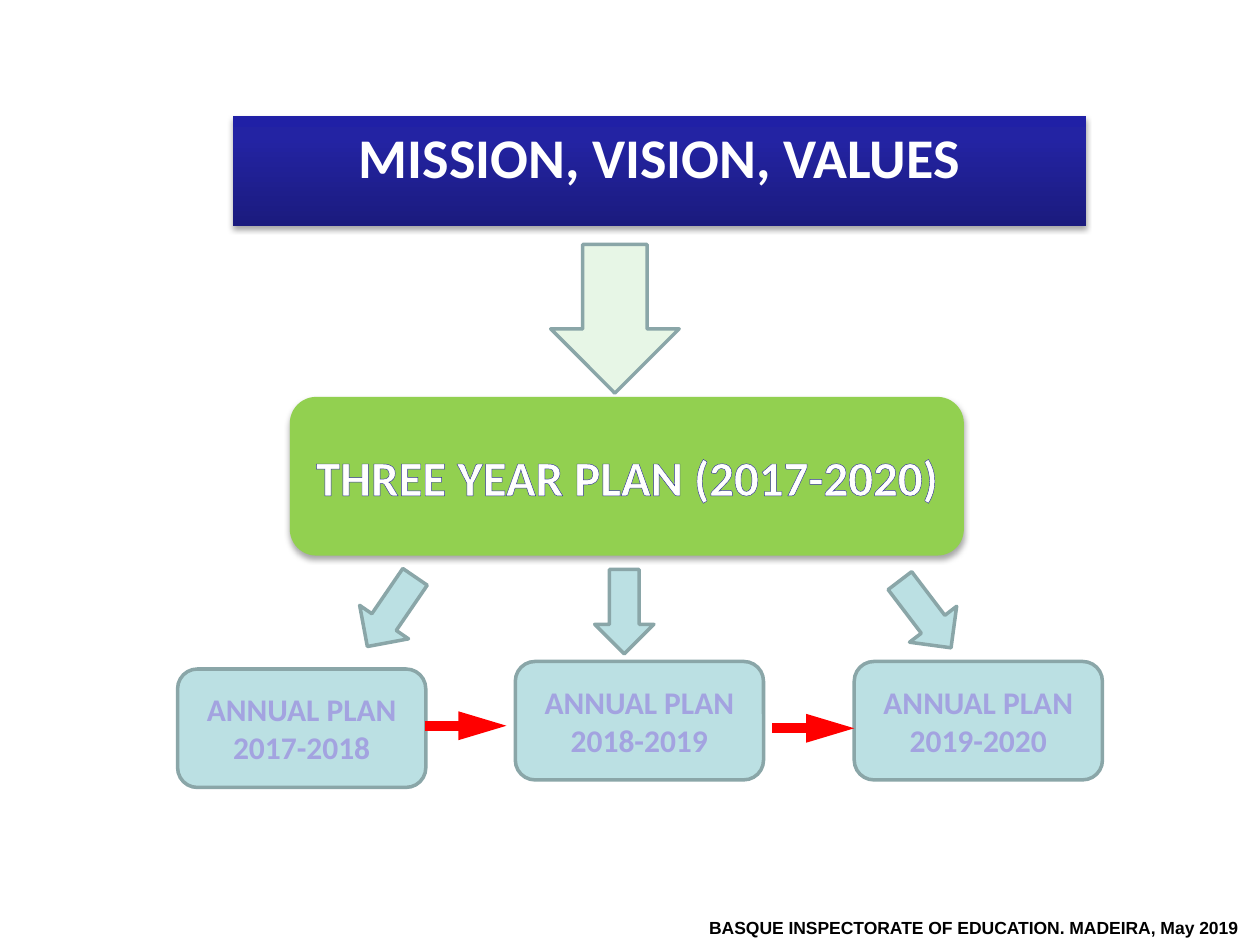
from copy import deepcopy

from lxml import etree
from pptx import Presentation
from pptx.dml.color import RGBColor
from pptx.enum.shapes import MSO_CONNECTOR, MSO_SHAPE
from pptx.enum.text import MSO_ANCHOR, MSO_AUTO_SIZE, PP_ALIGN
from pptx.oxml.ns import qn
from pptx.util import Pt

PX = 9144
STRAIGHT = MSO_CONNECTOR.STRAIGHT
DOWN_ARROW, ROUNDED = MSO_SHAPE.DOWN_ARROW, MSO_SHAPE.ROUNDED_RECTANGLE
TOP, MIDDLE = MSO_ANCHOR.TOP, MSO_ANCHOR.MIDDLE
LEFT, CENTER = PP_ALIGN.LEFT, PP_ALIGN.CENTER
NO_FIT = MSO_AUTO_SIZE.NONE

WHITE = RGBColor(0xFF, 0xFF, 0xFF)
BLACK = RGBColor(0x00, 0x00, 0x00)
RED = RGBColor(0xFF, 0x00, 0x00)
GREEN = RGBColor(0x92, 0xD0, 0x50)
MINT = RGBColor(0xE7, 0xF6, 0xE6)
AQUA = RGBColor(0xBB, 0xE0, 0xE3)
GREY = RGBColor(0x8A, 0xA6, 0xA8)
LILAC = RGBColor(0xA3, 0xA3, 0xE0)
INDIGO = RGBColor(0x33, 0x33, 0x99)
NAVY_STOPS = (
    (0, RGBColor(0x1B, 0x1B, 0x7E)),
    (0.8, RGBColor(0x23, 0x23, 0xA3)),
    (1, RGBColor(0x20, 0x20, 0xA6)),
)


class PlanSlide:
    """Holds the style and the current slide, and draws each kind of element."""

    def __init__(self, page):
        self.page = page
        self.heading_font = "Calibri"
        self.footer_font = "Arial"

    def set_text(self, box, text, size, color, font, align=CENTER, anchor=MIDDLE, outline=None):
        frame = box.text_frame
        frame.text = text
        frame.vertical_anchor = anchor
        para = frame.paragraphs[0]
        para.alignment = align
        span = para.runs[0]
        span.font.name = font
        span.font.size = Pt(size)
        span.font.bold = True
        span.font.color.rgb = color
        if outline:
            line = etree.Element(qn("a:ln"), w=str(Pt(1.75)))
            fill = etree.SubElement(line, qn("a:solidFill"))
            etree.SubElement(fill, qn("a:srgbClr"), val=str(outline))
            span.font._element.insert(0, line)

    def add_shadow(self, shape):
        shape.shadow.inherit = False
        effects = shape._element.spPr.find(qn("a:effectLst"))
        shadow = etree.SubElement(
            effects, qn("a:outerShdw"), blurRad="40000", dist="23000", dir="5400000", rotWithShape="0"
        )
        color = etree.SubElement(shadow, qn("a:srgbClr"), val=str(BLACK))
        etree.SubElement(color, qn("a:alpha"), val="35000")

    def title(self, text, left, top, width, height):
        box = self.page.shapes.title
        box.left, box.top, box.width, box.height = (n * PX for n in (left, top, width, height))
        box.fill.gradient()
        box.fill.gradient_angle = 90
        stops = box._element.spPr.find(".//" + qn("a:gsLst"))
        stops.append(deepcopy(stops[0]))
        for stop, (position, color) in zip(box.fill.gradient_stops, NAVY_STOPS):
            stop.position = position
            stop.color.rgb = color
        self.add_shadow(box)
        box.text_frame.auto_size = NO_FIT
        self.set_text(box, text, 32, WHITE, self.heading_font, anchor=TOP)

    def shape(self, kind, left, top, width, height, fill, line=GREY):
        shape = self.page.shapes.add_shape(kind, left * PX, top * PX, width * PX, height * PX)
        shape.shadow.inherit = False
        shape.fill.solid()
        shape.fill.fore_color.rgb = fill
        if line:
            shape.line.color.rgb = line
            shape.line.width = Pt(2)
        else:
            shape.line.fill.background()
        return shape

    def down_arrow(self, left, top, width, height, fill, rotation=0):
        self.shape(DOWN_ARROW, left, top, width, height, fill).rotation = rotation

    def three_year_plan(self, text, left, top, width, height):
        box = self.shape(ROUNDED, left, top, width, height, GREEN, line=None)
        self.add_shadow(box)
        self.set_text(box, text, 28, WHITE, self.heading_font, outline=INDIGO)

    def annual_plan(self, text, left, top):
        box = self.shape(ROUNDED, left, top, 197, 94, AQUA)
        self.set_text(box, text, 18, LILAC, self.heading_font, outline=INDIGO)

    def red_arrow(self, left, y, length):
        arrow = self.page.shapes.add_connector(STRAIGHT, left * PX, y * PX, (left + length) * PX, y * PX)
        arrow.line.color.rgb = RED
        arrow.line.width = Pt(5.5)
        line = arrow._element.spPr.find(qn("a:ln"))
        etree.SubElement(line, qn("a:tailEnd"), type="triangle", w="med", len="lg")
        etree.SubElement(arrow._element.spPr, qn("a:effectLst"))

    def footer(self, text, left, top, width, height):
        box = self.page.shapes.add_textbox(left * PX, top * PX, width * PX, height * PX)
        box.text_frame.word_wrap = False
        self.set_text(box, text, 10, BLACK, self.footer_font, align=LEFT, anchor=TOP)


def main():
    deck = Presentation()
    deck.slide_width, deck.slide_height = 1000 * PX, 750 * PX
    slide = PlanSlide(deck.slides.add_slide(deck.slide_layouts[5]))

    slide.title("MISSION, VISION, VALUES", 185, 92, 677, 87)
    slide.footer("BASQUE INSPECTORATE OF EDUCATION. MADEIRA, May 2019", 553, 723, 447, 27)
    slide.down_arrow(437, 194, 102, 118, MINT)
    slide.three_year_plan("THREE YEAR PLAN (2017-2020)", 230, 315, 535, 126)
    for left, top, rotation in ((287, 452, 34.4), (472, 452, 0), (711, 454, 322.7)):
        slide.down_arrow(left, top, 47, 67, AQUA, rotation)
    for year, (left, top) in enumerate(((141, 531), (409, 525), (678, 525)), 2017):
        slide.annual_plan(f"ANNUAL PLAN {year}-{year + 1}", left, top)
    for left, y in ((613, 578), (337, 576)):
        slide.red_arrow(left, y, 65)

    deck.save("out.pptx")


if __name__ == "__main__":
    main()
